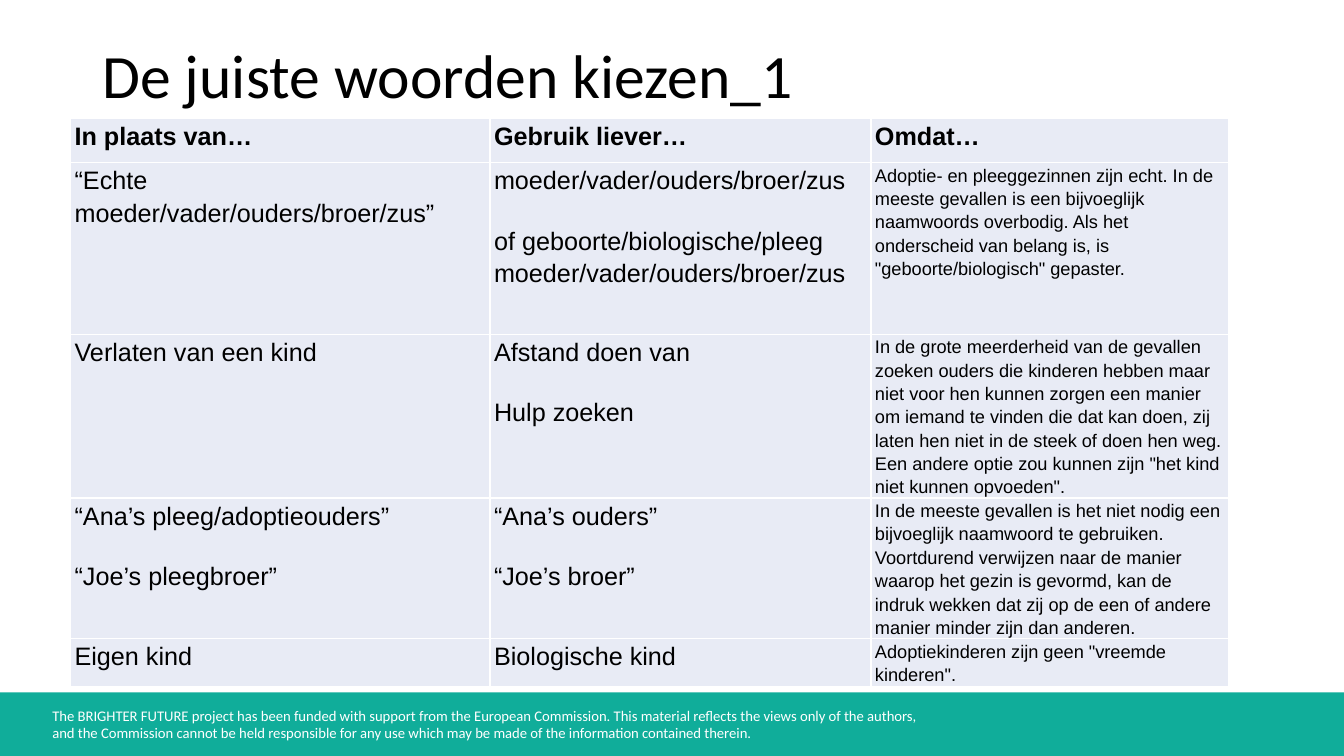
from dataclasses import dataclass
from lxml.etree import SubElement as Sub
from pptx import Presentation
from pptx.dml.color import RGBColor as Rgb
from pptx.enum.shapes import MSO_SHAPE as Shape
from pptx.enum.text import MSO_ANCHOR as Anchor, MSO_AUTO_SIZE as Fit, PP_ALIGN as Align
from pptx.oxml.ns import qn
from pptx.util import Cm, Pt


@dataclass
class Theme:
    ink: str = "000000"
    white: str = "FFFFFF"
    teal: str = "10AD9A"
    pale: str = "E8EBF5"
    head: str = "Calibri"
    body: str = "Arial"
    title: float = 44
    large: float = 18
    small: float = 13
    note: float = 10.5


theme = Theme()


def write(para, text, face, size, color, bold=False):
    run = para.add_run()
    run.text = text
    font = run.font
    font.name, font.size, font.bold = face, Pt(size), bold
    font.color.rgb = Rgb.from_string(color)


def edge(cell):
    props = cell._tc.get_or_add_tcPr()
    for side in ("L", "R", "T", "B"):
        line = Sub(props, qn("a:ln" + side), w=str(Pt(1)))
        fill = Sub(line, qn("a:solidFill"))
        Sub(fill, qn("a:srgbClr"), val=theme.white)


deck = Presentation()
deck.slide_width, deck.slide_height = Cm(33.87), Cm(19.05)
slide = deck.slides.add_slide(deck.slide_layouts[5])
shapes = slide.shapes

band = shapes.add_shape(Shape.RECTANGLE, Cm(0), Cm(17.45), Cm(33.87), Cm(1.6))
band.shadow.inherit = False
band.fill.solid()
band.fill.fore_color.rgb = Rgb.from_string(theme.teal)
band.line.fill.background()

note = shapes.add_textbox(Cm(1.07), Cm(17.68), Cm(25.4), Cm(1.14))
note.text_frame.word_wrap = True
para = note.text_frame.paragraphs[0]
write(para, "The BRIGHTER FUTURE project has been funded with support from the European Commission. "
      "This material reflects the views only of the authors, ", theme.head, theme.note, theme.white)
para.add_line_break()
write(para, "and the Commission cannot be held responsible for any use which may be made of the "
      "information contained therein.", theme.head, theme.note, theme.white)

title = shapes.title
title.left, title.top, title.width, title.height = Cm(2.33), Cm(0.84), Cm(29.21), Cm(2.26)
frame = title.text_frame
frame.word_wrap = True
frame.auto_size = Fit.NONE
frame.vertical_anchor = Anchor.MIDDLE
para = frame.paragraphs[0]
para.alignment = Align.LEFT
para.line_spacing = 0.9
write(para, "De juiste woorden kiezen_1", theme.head, theme.title, theme.ink)

rows = [
    (["In plaats van…"], ["Gebruik liever…"], ["Omdat…"]),
    (["“Echte moeder/vader/ouders/broer/zus”"],
     ["moeder/vader/ouders/broer/zus",
      "of geboorte/biologische/pleeg moeder/vader/ouders/broer/zus"],
     ["Adoptie- en pleeggezinnen zijn echt. In de meeste gevallen is een bijvoeglijk "
      "naamwoords overbodig. Als het onderscheid van belang is, is "
      "\"geboorte/biologisch\" gepaster."]),
    (["Verlaten van een kind"],
     ["Afstand doen van", "Hulp zoeken"],
     ["In de grote meerderheid van de gevallen zoeken ouders die kinderen hebben maar niet "
      "voor hen kunnen zorgen een manier om iemand te vinden die dat kan doen, zij laten hen "
      "niet in de steek of doen hen weg. Een andere optie zou kunnen zijn \"het kind niet "
      "kunnen opvoeden\"."]),
    (["“Ana’s pleeg/adoptieouders”", "“Joe’s pleegbroer”"],
     ["“Ana’s ouders”", "“Joe’s broer”"],
     ["In de meeste gevallen is het niet nodig een bijvoeglijk naamwoord te gebruiken. "
      "Voortdurend verwijzen naar de manier waarop het gezin is gevormd, kan de indruk wekken "
      "dat zij op de een of andere manier minder zijn dan anderen."]),
    (["Eigen kind"], ["Biologische kind"],
     ["Adoptiekinderen zijn geen \"vreemde kinderen\"."]),
]
widths = [10.57, 9.6, 9.02]
heights = [1.12, 4.32, 4.13, 3.54, 1.2]

table = shapes.add_table(len(rows), len(widths), Cm(1.78), Cm(2.98),
                         Cm(sum(widths)), Cm(sum(heights))).table
table.first_row = table.horz_banding = False
for col, width in zip(table.columns, widths):
    col.width = Cm(width)
for row, height in zip(table.rows, heights):
    row.height = Cm(height)

for r, row in enumerate(rows):
    for c, texts in enumerate(row):
        cell = table.cell(r, c)
        edge(cell)
        cell.fill.solid()
        cell.fill.fore_color.rgb = Rgb.from_string(theme.pale)
        cell.margin_left = cell.margin_right = Cm(0.1)
        cell.margin_top = cell.margin_bottom = Cm(0)
        small = r > 0 and c == 2
        size = theme.small if small else theme.large
        for n, text in enumerate(texts):
            para = cell.text_frame.add_paragraph() if n else cell.text_frame.paragraphs[0]
            para.line_spacing = Pt(16.7) if small else 1.15
            if n:
                para.space_before = Pt(20)
            write(para, text, theme.body, size, theme.ink, r == 0)

deck.save("out.pptx")
